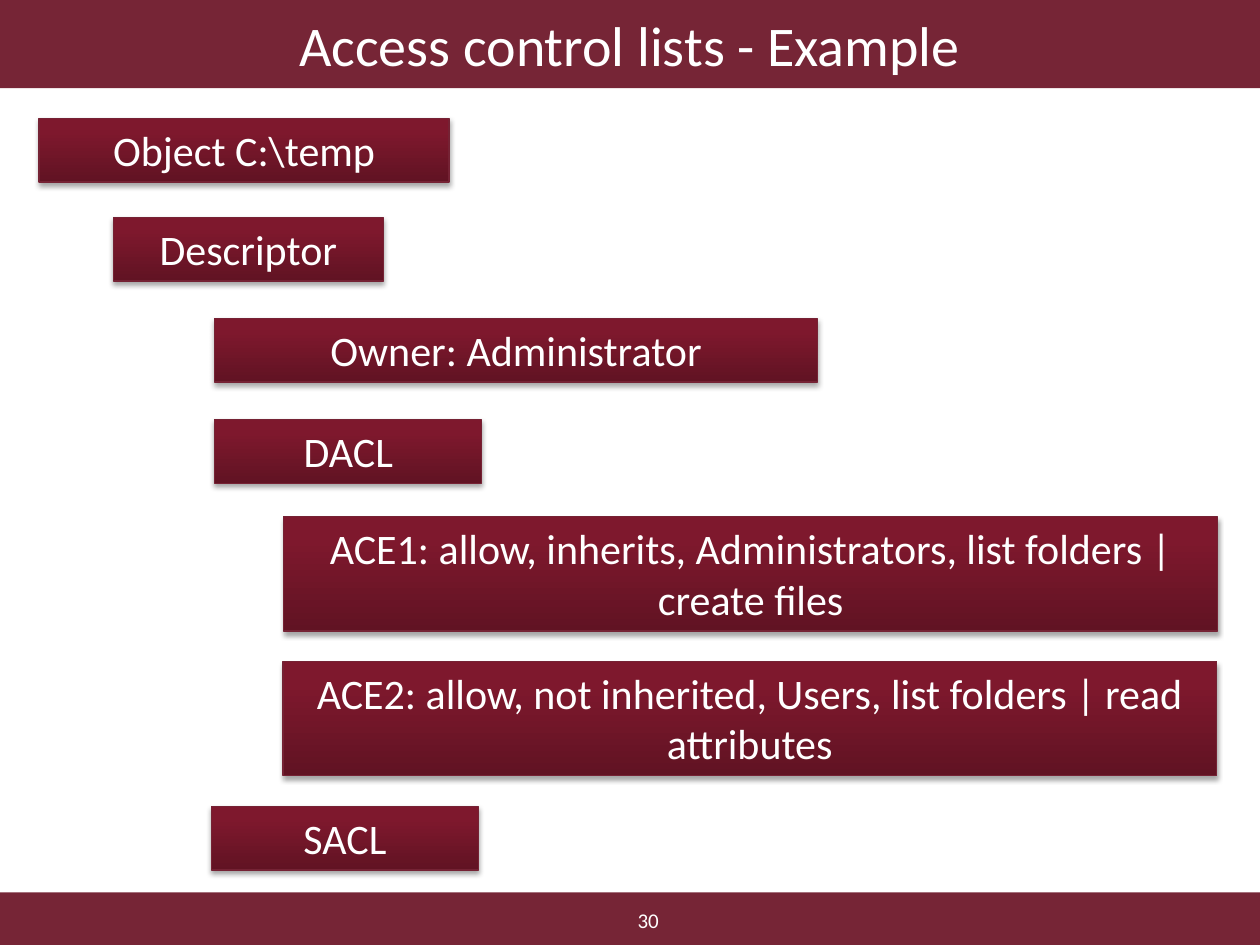
from dataclasses import dataclass

from lxml.etree import SubElement
from pptx import Presentation
from pptx.dml.color import RGBColor
from pptx.enum.shapes import MSO_SHAPE as Preset
from pptx.enum.text import MSO_ANCHOR as Anchor, MSO_AUTO_SIZE as AutoSize, PP_ALIGN as Align
from pptx.oxml.ns import qn
from pptx.shapes.autoshape import Shape
from pptx.slide import Slide
from pptx.util import Pt


@dataclass(frozen=True)
class Theme:
    font: str = "Calibri"
    band: str = "762536"
    outline: str = "752234"
    text: str = "FFFFFF"
    shadow: str = "000000"
    gradient: tuple[tuple[int, str], ...] = ((0, "611323"), (80, "7E182D"), (100, "81162D"))
    title_size: float = 32
    box_size: float = 24
    number_size: float = 12


@dataclass(frozen=True)
class Frame:
    left: float
    top: float
    width: float
    height: float

    def lengths(self) -> tuple[Pt, ...]:
        return tuple(Pt(value) for value in (self.left, self.top, self.width, self.height))


@dataclass(frozen=True)
class Entry:
    text: str
    frame: Frame


THEME = Theme()
PAGE_WIDTH, PAGE_HEIGHT = 720, 540
ONE_LINE, TWO_LINES = 36.35, 65.4

ENTRIES = (
    Entry(r"Object C:\temp", Frame(22.4, 67.7, 234.3, ONE_LINE)),
    Entry("Descriptor", Frame(64.8, 124.3, 154.3, ONE_LINE)),
    Entry("Owner: Administrator", Frame(122.8, 182, 344.3, ONE_LINE)),
    Entry("DACL", Frame(122.8, 239.8, 152.5, ONE_LINE)),
    Entry("ACE1: allow, inherits, Administrators, list folders | create files",
          Frame(162, 295.2, 533.9, TWO_LINES)),
    Entry("ACE2: allow, not inherited, Users, list folders | read attributes",
          Frame(161.7, 377.8, 533.5, TWO_LINES)),
    Entry("SACL", Frame(120.9, 460.8, 152.5, ONE_LINE)),
)


def write(shape: Shape, text: str, size: float, anchor: Anchor) -> None:
    text_frame = shape.text_frame
    text_frame.word_wrap = True
    text_frame.vertical_anchor = anchor
    para = text_frame.paragraphs[0]
    para.alignment = Align.CENTER
    span = para.add_run()
    span.text = text
    span.font.name = THEME.font
    span.font.size = Pt(size)
    span.font.color.rgb = RGBColor.from_string(THEME.text)


def add_rectangle(page: Slide, frame: Frame) -> Shape:
    box = page.shapes.add_shape(Preset.RECTANGLE, *frame.lengths())
    box.shadow.inherit = False
    return box


def add_band(page: Slide, frame: Frame) -> Shape:
    band = add_rectangle(page, frame)
    band.fill.solid()
    band.fill.fore_color.rgb = RGBColor.from_string(THEME.band)
    band.line.fill.background()
    return band


def shade(box: Shape) -> None:
    """Fill with the three-stop gradient, running from bottom to top."""
    box.fill.gradient()
    box.fill.gradient_angle = 90
    stops = box.element.spPr.find(f".//{qn('a:gsLst')}")
    for stop in list(stops):
        stops.remove(stop)
    for percent, color in THEME.gradient:
        stop = SubElement(stops, qn("a:gs"), pos=str(percent * 1000))
        SubElement(stop, qn("a:srgbClr"), val=color)


def add_drop_shadow(box: Shape) -> None:
    effects = box.element.spPr.find(qn("a:effectLst"))
    shadow = SubElement(effects, qn("a:outerShdw"), blurRad=str(Pt(3.1)), dist=str(Pt(1.8)),
                        dir="5400000", rotWithShape="0")
    color = SubElement(shadow, qn("a:srgbClr"), val=THEME.shadow)
    SubElement(color, qn("a:alpha"), val="35000")


def add_entry(page: Slide, entry: Entry) -> None:
    box = add_rectangle(page, entry.frame)
    shade(box)
    box.line.color.rgb = RGBColor.from_string(THEME.outline)
    box.line.width = Pt(0.75)
    add_drop_shadow(box)
    write(box, entry.text, THEME.box_size, Anchor.TOP)
    box.text_frame.auto_size = AutoSize.SHAPE_TO_FIT_TEXT


def main() -> None:
    deck = Presentation()
    deck.slide_width, deck.slide_height = Pt(PAGE_WIDTH), Pt(PAGE_HEIGHT)
    page = deck.slides.add_slide(deck.slide_layouts[6])

    add_band(page, Frame(0, 510, PAGE_WIDTH, 30))
    title = add_band(page, Frame(0, 0, PAGE_WIDTH, 50.4))
    write(title, "Access control lists - Example", THEME.title_size, Anchor.MIDDLE)

    for entry in ENTRIES:
        add_entry(page, entry)

    number = page.shapes.add_textbox(*Frame(253.4, 512, 234, 28).lengths())
    write(number, "30", THEME.number_size, Anchor.MIDDLE)

    deck.save("out.pptx")


if __name__ == "__main__":
    main()
